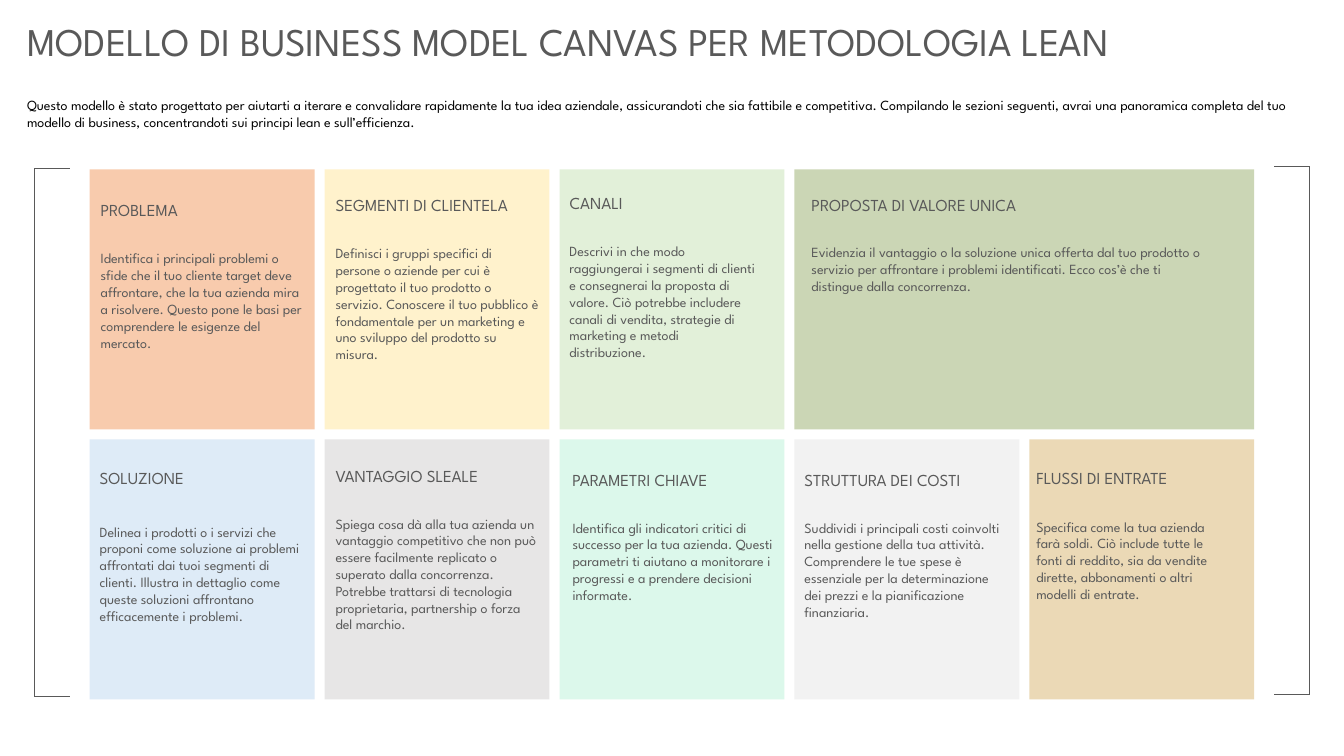
from dataclasses import dataclass

from lxml import etree
from pptx import Presentation
from pptx.dml.color import RGBColor
from pptx.enum.shapes import MSO_CONNECTOR, MSO_SHAPE
from pptx.enum.text import MSO_ANCHOR, MSO_AUTO_SIZE, PP_ALIGN
from pptx.oxml.ns import qn
from pptx.util import Inches, Pt

STRAIGHT = MSO_CONNECTOR.STRAIGHT
RECTANGLE = MSO_SHAPE.RECTANGLE
TOP = MSO_ANCHOR.TOP
LEFT = PP_ALIGN.LEFT
NO_FIT = MSO_AUTO_SIZE.NONE

FONT = "League Spartan"
GRAY = RGBColor(0x59, 0x59, 0x59)
BLACK = RGBColor(0x00, 0x00, 0x00)
PEACH = RGBColor(0xF8, 0xCB, 0xAD)
YELLOW = RGBColor(0xFF, 0xF2, 0xCC)
LIGHT_GREEN = RGBColor(0xE2, 0xF0, 0xD9)
OLIVE = RGBColor(0xCB, 0xD6, 0xB5)
LIGHT_BLUE = RGBColor(0xDE, 0xEB, 0xF7)
SILVER = RGBColor(0xE7, 0xE6, 0xE6)
MINT = RGBColor(0xDC, 0xF8, 0xEB)
PALE_GRAY = RGBColor(0xF2, 0xF2, 0xF2)
SAND = RGBColor(0xEB, 0xD9, 0xB6)

SLIDE_WIDTH, SLIDE_HEIGHT = 13.33, 7.5
GRID_LEFT, GRID_TOP = 0.89, 1.68
CARD_WIDTH, CARD_HEIGHT = 2.23, 2.58
COLUMN_PITCH, ROW_PITCH = 2.33, 2.68
BRACKET_WIDTH, BRACKET_HEIGHT = 0.35, 5.24
HEADING_HEIGHT = 0.3


@dataclass
class Card:
    row: int
    column: int
    fill: RGBColor
    heading: str
    body: str
    indent: float
    heading_drop: float
    body_drop: float
    body_width: float = 2.22
    span: int = 1


CARDS = [
    Card(0, 0, PEACH, "PROBLEMA",
         "Identifica i principali problemi o sfide che il tuo cliente target deve affrontare, "
         "che la tua azienda mira a risolvere. Questo pone le basi per comprendere le esigenze "
         "del mercato.", 0.01, 0.25, 0.75),
    Card(0, 1, YELLOW, "SEGMENTI DI CLIENTELA",
         "Definisci i gruppi specifici di persone o aziende per cui è progettato il tuo prodotto "
         "o servizio. Conoscere il tuo pubblico è fondamentale per un marketing e uno sviluppo "
         "del prodotto su misura.", 0.01, 0.2, 0.7),
    Card(0, 2, LIGHT_GREEN, "CANALI",
         "Descrivi in che modo raggiungerai i segmenti di clienti e consegnerai la proposta di "
         "valore. Ciò potrebbe includere canali di vendita, strategie di marketing e metodi "
         "distribuzione.", 0, 0.18, 0.68, 2.04),
    Card(0, 3, OLIVE, "PROPOSTA DI VALORE UNICA",
         "Evidenzia il vantaggio o la soluzione unica offerta dal tuo prodotto o servizio per "
         "affrontare i problemi identificati. Ecco cos’è che ti distingue dalla concorrenza.",
         0.07, 0.2, 0.69, 4.16, span=2),
    Card(1, 0, LIGHT_BLUE, "SOLUZIONE",
         "Delinea i prodotti o i servizi che proponi come soluzione ai problemi affrontati dai "
         "tuoi segmenti di clienti. Illustra in dettaglio come queste soluzioni affrontano "
         "efficacemente i problemi.", 0, 0.23, 0.78),
    Card(1, 1, SILVER, "VANTAGGIO SLEALE",
         "Spiega cosa dà alla tua azienda un vantaggio competitivo che non può essere facilmente "
         "replicato o superato dalla concorrenza. Potrebbe trattarsi di tecnologia proprietaria, "
         "partnership o forza del marchio.", 0.01, 0.21, 0.7),
    Card(1, 2, MINT, "PARAMETRI CHIAVE",
         "Identifica gli indicatori critici di successo per la tua azienda. Questi parametri ti "
         "aiutano a monitorare i progressi e a prendere decisioni informate.",
         0.03, 0.25, 0.74),
    Card(1, 3, PALE_GRAY, "STRUTTURA DEI COSTI",
         "Suddividi i principali costi coinvolti nella gestione della tua attività. Comprendere "
         "le tue spese è essenziale per la determinazione dei prezzi e la pianificazione "
         "finanziaria.", 0, 0.25, 0.74),
    Card(1, 4, SAND, "FLUSSI DI ENTRATE",
         "Specifica come la tua azienda farà soldi. Ciò include tutte le fonti di reddito, sia "
         "da vendite dirette, abbonamenti o altri modelli di entrate.",
         -0.03, 0.23, 0.73, 1.93),
]

TITLE = "MODELLO DI BUSINESS MODEL CANVAS PER METODOLOGIA LEAN"
INTRO = (
    "Questo modello è stato progettato per aiutarti a iterare e convalidare rapidamente la tua "
    "idea aziendale, assicurandoti che sia fattibile e competitiva. Compilando le sezioni "
    "seguenti, avrai una panoramica completa del tuo modello di business, concentrandoti sui "
    "principi lean e sull’efficienza."
)


def write_text(shape, text, size, color=GRAY):
    frame = shape.text_frame
    frame.word_wrap = True
    frame.auto_size = NO_FIT
    frame.vertical_anchor = TOP
    paragraph = frame.paragraphs[0]
    paragraph.alignment = LEFT
    run = paragraph.add_run()
    run.text = text
    run.font.name = FONT
    run.font.size = Pt(size)
    run.font.color.rgb = color


def add_text(slide, text, left, top, width, height, **text_format):
    box = slide.shapes.add_textbox(Inches(left), Inches(top), Inches(width), Inches(height))
    write_text(box, text, **text_format)


def add_header(slide, left, top, width):
    title = slide.shapes.title
    title.left, title.top = Inches(left), Inches(top)
    title.width, title.height = Inches(width), Inches(0.57)
    write_text(title, TITLE, size=28)
    add_text(slide, INTRO, left, top + 0.79, width - 0.05, 0.44, size=10, color=BLACK)


def add_card(slide, card, left, top, width, height):
    panel = slide.shapes.add_shape(
        RECTANGLE, Inches(left), Inches(top), Inches(width), Inches(height))
    panel.shadow.inherit = False
    panel.fill.solid()
    panel.fill.fore_color.rgb = card.fill
    panel.line.fill.background()
    text_left = left + card.indent
    add_text(slide, card.heading, text_left, top + card.heading_drop,
             card.body_width + 0.15, HEADING_HEIGHT, size=12)
    add_text(slide, card.body, text_left, top + card.body_drop,
             card.body_width, height / 2, size=10)


def add_canvas(slide, left, top):
    for card in CARDS:
        width = CARD_WIDTH + (card.span - 1) * COLUMN_PITCH
        add_card(slide, card, left + card.column * COLUMN_PITCH,
                 top + card.row * ROW_PITCH, width, CARD_HEIGHT)


def add_bracket(slide, spine, tip, top, height):
    group = slide.shapes.add_group_shape()
    bottom = top + height
    strokes = [(spine, top, tip, top), (spine, bottom, tip, bottom), (spine, top, spine, bottom)]
    for stroke in strokes:
        line = group.shapes.add_connector(STRAIGHT, *(Inches(value) for value in stroke))
        line.line.color.rgb = GRAY
        line.line.width = Pt(1)
        etree.SubElement(line._element.spPr, qn("a:effectLst"))


def main():
    presentation = Presentation()
    presentation.slide_width = Inches(SLIDE_WIDTH)
    presentation.slide_height = Inches(SLIDE_HEIGHT)
    slide = presentation.slides.add_slide(presentation.slide_layouts[5])
    add_header(slide, 0.17, 0.12, 12.95)
    add_canvas(slide, GRID_LEFT, GRID_TOP)
    add_bracket(slide, 0.34, 0.34 + BRACKET_WIDTH, 1.67, BRACKET_HEIGHT)
    add_bracket(slide, 12.99, 12.99 - BRACKET_WIDTH, 1.65, BRACKET_HEIGHT)
    presentation.save("out.pptx")


if __name__ == "__main__":
    main()
